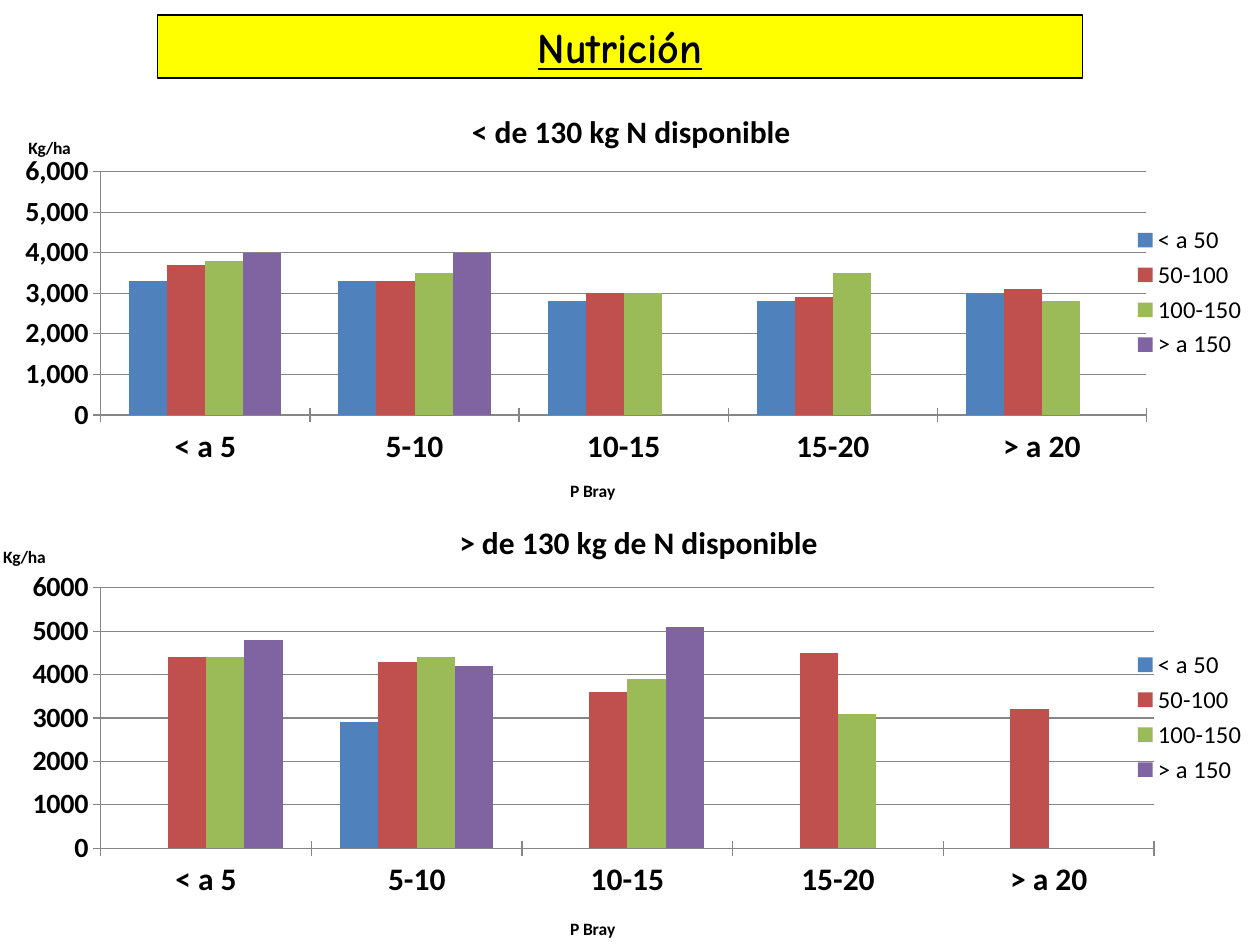
from lxml import etree
from pptx import Presentation
from pptx.chart.data import CategoryChartData
from pptx.dml.color import RGBColor
from pptx.enum.chart import XL_CHART_TYPE, XL_LEGEND_POSITION, XL_TICK_MARK
from pptx.enum.shapes import MSO_SHAPE
from pptx.enum.text import MSO_ANCHOR, MSO_AUTO_SIZE, PP_ALIGN
from pptx.oxml.ns import qn
from pptx.util import Inches, Pt

COLUMNS = XL_CHART_TYPE.COLUMN_CLUSTERED
RIGHT = XL_LEGEND_POSITION.RIGHT
CROSS = XL_TICK_MARK.CROSS
RECTANGLE = MSO_SHAPE.RECTANGLE
MIDDLE = MSO_ANCHOR.MIDDLE
GROW = MSO_AUTO_SIZE.SHAPE_TO_FIT_TEXT
CENTER = PP_ALIGN.CENTER

BLACK, YELLOW, GRAY = "000000", "FFFF00", "868686"
PHOSPHORUS_RANGES = ["< a 5", "5-10", "10-15", "15-20", "> a 20"]
SERIES_COLORS = {"< a 50": "4F81BD", "50-100": "C0504D",
                 "100-150": "9BBB59", "> a 150": "8064A2"}

LOW_NITROGEN = {
    "title": "< de 130 kg N disponible",
    "format": "#,##0",
    "yields": [[3300, 3300, 2800, 2800, 3000],
               [3700, 3300, 3000, 2900, 3100],
               [3800, 3500, 3000, 3500, 2800],
               [4000, 4000, None, None, None]],
    "plot": (0.08, 0.212, 0.83, 0.581),
    "title_at": (0.37, 0.05),
    "unit_at": (0.02, 0.12),
    "bray_at": (0.45, 0.94),
}
HIGH_NITROGEN = {
    "title": "> de 130 kg de N disponible",
    "format": "0",
    "yields": [[None, 2900, None, None, None],
               [4400, 4300, 3600, 4500, 3200],
               [4400, 4400, 3900, 3100, None],
               [4800, 4200, 5100, None, None]],
    "plot": (0.08, 0.212, 0.836, 0.58),
    "title_at": (0.36, 0.05),
    "unit_at": (0, 0.11),
    "bray_at": (0.45, 0.94),
}


def color(code):
    """Turn a hex string into a colour."""
    return RGBColor.from_string(code)


def make_layout(values, inner=False):
    """Return a manual chart layout in fractions of the chart."""
    layout = etree.Element(qn("c:layout"))
    manual = etree.SubElement(layout, qn("c:manualLayout"))
    settings = [("layoutTarget", "inner")] if inner else []
    settings += [("xMode", "edge"), ("yMode", "edge")]
    settings += zip("xywh", values)
    for name, value in settings:
        etree.SubElement(manual, qn(f"c:{name}")).set("val", str(value))
    return layout


def drop_layout(element):
    """Remove the layout that an element already has."""
    for layout in element.findall(qn("c:layout")):
        element.remove(layout)


def write_title(title, text, size, position):
    """Write a bold horizontal chart or axis title at a position."""
    frame = title.text_frame
    span = frame.paragraphs[0].add_run()
    span.text = text
    span.font.size, span.font.bold = Pt(size), True
    span.font.name = "Calibri"
    span.font.color.rgb = color(BLACK)
    frame._txBody.find(qn("a:bodyPr")).set("rot", "0")
    element = title._element
    drop_layout(element)
    element.find(qn("c:tx")).addnext(make_layout(position))


def style_axis(axis, size):
    """Set the ticks, line and label font of an axis."""
    axis.major_tick_mark = CROSS
    axis.tick_labels.font.size = Pt(size)
    axis.tick_labels.font.bold = True
    axis.format.line.color.rgb = color(GRAY)
    axis.format.line.width = Pt(0.75)


def add_banner(page, box):
    """Place the yellow heading in the box."""
    banner = page.shapes.add_shape(RECTANGLE, *box)
    banner.shadow.inherit = False
    banner.fill.solid()
    banner.fill.fore_color.rgb = color(YELLOW)
    banner.line.color.rgb = color(BLACK)
    banner.line.width = Pt(0.75)
    frame = banner.text_frame
    frame.word_wrap = True
    frame.auto_size = GROW
    frame.vertical_anchor = MIDDLE
    para = frame.paragraphs[0]
    para.alignment = CENTER
    span = para.add_run()
    span.text = "Nutrición"
    span.font.name, span.font.size = "Comic Neue", Pt(24)
    span.font.bold = span.font.underline = True
    span.font.color.rgb = color(BLACK)


def add_yield_chart(page, box, panel):
    """Place one clustered yield chart in the box."""
    data = CategoryChartData(number_format=panel["format"])
    data.categories = PHOSPHORUS_RANGES
    for name, values in zip(SERIES_COLORS, panel["yields"]):
        data.add_series(name, values)
    chart = page.shapes.add_chart(COLUMNS, *box, data).chart
    chart.font.name, chart.font.size = "Calibri", Pt(10)
    chart.font.color.rgb = color(BLACK)
    chart.has_title = True
    write_title(chart.chart_title, panel["title"], 18, panel["title_at"])

    plot = chart.plots[0]
    plot.gap_width, plot.overlap = 150, 0
    plot.vary_by_categories = False
    for series in plot.series:
        series.format.fill.solid()
        series.format.fill.fore_color.rgb = color(SERIES_COLORS[series.name])

    style_axis(chart.category_axis, 18)
    write_title(chart.category_axis.axis_title, "P Bray", 10, panel["bray_at"])
    value_axis = chart.value_axis
    style_axis(value_axis, 16)
    write_title(value_axis.axis_title, "Kg/ha", 10, panel["unit_at"])
    value_axis.minimum_scale, value_axis.maximum_scale = 0, 6000
    value_axis.major_unit = 1000
    value_axis.tick_labels.number_format = panel["format"]
    value_axis.tick_labels.number_format_is_linked = False
    value_axis.has_major_gridlines = True
    value_axis.major_gridlines.format.line.color.rgb = color(GRAY)
    value_axis.major_gridlines.format.line.width = Pt(0.75)

    chart.has_legend = True
    chart.legend.position = RIGHT
    chart.legend.include_in_layout = False
    chart.legend.font.size = Pt(14)

    plot_area = chart._chartSpace.find(f".//{qn('c:plotArea')}")
    drop_layout(plot_area)
    plot_area.insert(0, make_layout(panel["plot"], inner=True))


def main():
    """Build and save the deck."""
    deck = Presentation()
    deck.slide_width, deck.slide_height = Inches(10), Inches(7.5)
    page = deck.slides.add_slide(deck.slide_layouts[6])
    add_banner(page, [Inches(n) for n in (1.25, 0.12, 7.34, 0.5)])
    add_yield_chart(page, [Inches(n) for n in (0, 0.66, 10, 3.36)], LOW_NITROGEN)
    add_yield_chart(page, [Inches(n) for n in (0, 3.91, 10, 3.59)], HIGH_NITROGEN)
    deck.save("out.pptx")


if __name__ == "__main__":
    main()
